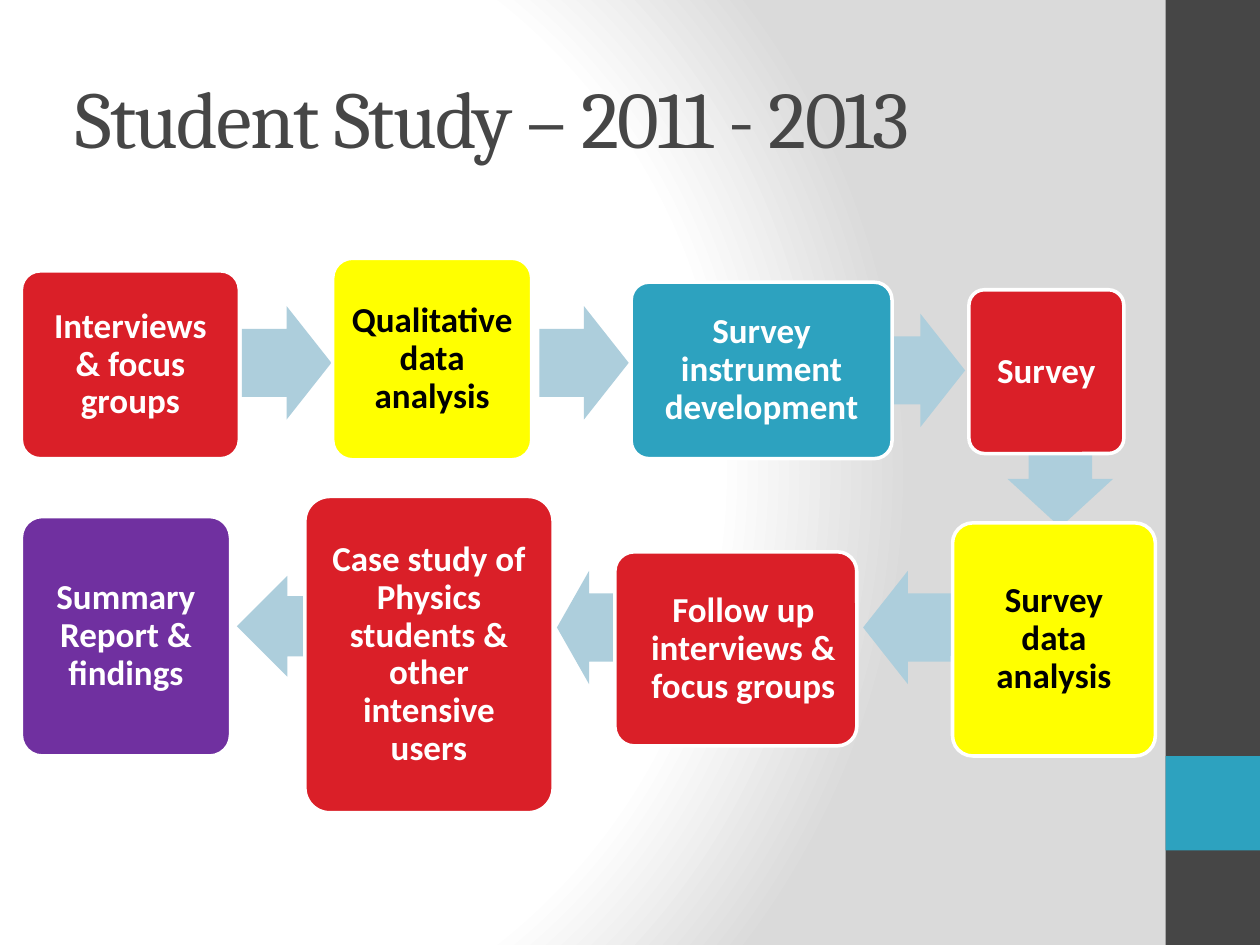
from lxml import etree
from pptx import Presentation
from pptx.dml.color import RGBColor
from pptx.enum.shapes import MSO_SHAPE
from pptx.enum.text import MSO_ANCHOR, PP_ALIGN
from pptx.oxml import parse_xml
from pptx.oxml.ns import nsdecls, qn
from pptx.util import Inches, Pt

RED, YELLOW, TEAL, PURPLE = "DA1F28", "FFFF00", "2DA2BF", "7030A0"
WHITE, BLACK, DARK, PALE, GREY = "FFFFFF", "000000", "464646", "ADCEDC", "DADADA"

# Wording, fill, box (left, top, width, height), left and right text insets
STEPS = [
    ("Interviews & focus groups", RED, (0.17, 2.15, 1.73, 1.49), (0.13, 0.13)),
    ("Qualitative data analysis", YELLOW, (2.64, 2.05, 1.58, 1.6), (0.09, 0.09)),
    ("Survey instrument development", TEAL, (5.01, 2.24, 2.07, 1.4), (0.1, 0.1)),
    ("Survey", RED, (7.69, 2.3, 1.23, 1.3), (0.1, 0.1)),
    ("Survey data analysis", YELLOW, (7.56, 4.15, 1.61, 1.85), (0.1, 0.1)),
    ("Follow up interviews & focus groups", RED, (4.88, 4.38, 1.92, 1.54), (0.16, 0.04)),
    ("Case study of Physics students & other intensive users", RED,
     (2.42, 3.94, 1.97, 2.51), (0.1, 0.1)),
    ("Summary Report & findings", PURPLE, (0.17, 4.1, 1.66, 1.9), (0.1, 0.1)),
]

# Box before turning, rotation in degrees
ARROWS = [
    ((1.92, 2.43, 0.71, 0.9), 0),
    ((4.28, 2.43, 0.71, 0.9), 0),
    ((6.95, 2.49, 0.71, 0.9), 0),
    ((8.03, 3.38, 0.77, 0.84), 90),
    ((6.85, 4.53, 0.71, 0.9), 180),
    ((4.42, 4.53, 0.51, 0.9), 180),
    ((1.88, 4.57, 0.95, 0.8), 180),
]


def color(hex_text):
    return RGBColor.from_string(hex_text)


def add_block(page, preset, box, fill):
    """Add a flat preset shape without outline or shadow."""
    block = page.shapes.add_shape(preset, *(Inches(length) for length in box))
    block.shadow.inherit = False
    block.fill.solid()
    block.fill.fore_color.rgb = color(fill)
    block.line.fill.background()
    return block


def set_background(page):
    """Fill the page with a circular gradient centred left of the middle."""
    fill = page.background.fill
    fill.gradient()
    gradient = page.element.find(".//" + qn("a:gradFill"))
    for child in list(gradient):
        gradient.remove(child)
    stops = etree.SubElement(gradient, qn("a:gsLst"))
    for percent, shade in ((0, WHITE), (75, WHITE), (100, GREY)):
        stop = etree.SubElement(stops, qn("a:gs"), pos=str(percent * 1000))
        etree.SubElement(stop, qn("a:srgbClr"), val=shade)
    gradient.append(parse_xml(
        f'<a:path {nsdecls("a")} path="circle">'
        '<a:fillToRect l="20000" t="50000" r="100000" b="50000"/></a:path>'))


def add_sidebar(page, box):
    left, top, width, height = box
    add_block(page, MSO_SHAPE.RECTANGLE, box, DARK)
    add_block(page, MSO_SHAPE.RECTANGLE, (left, top + 0.8 * height, width, width), TEAL)


def set_title(page, box, text):
    title = page.shapes.title
    title.left, title.top, title.width, title.height = (Inches(length) for length in box)
    frame = title.text_frame
    frame.text = text
    frame.word_wrap = True
    frame.vertical_anchor = MSO_ANCHOR.MIDDLE
    para = frame.paragraphs[0]
    para.alignment = PP_ALIGN.LEFT
    span = para.runs[0]
    span.font.name = "Cambria"
    span.font.size = Pt(46)
    span.font.color.rgb = color(DARK)
    span.font._element.set("spc", "-100")


def add_arrow(page, box, rotation):
    arrow = add_block(page, MSO_SHAPE.RIGHT_ARROW, box, PALE)
    arrow.adjustments[0] = 0.6
    arrow.adjustments[1] = 0.5
    arrow.rotation = rotation


def add_step(page, box, text, fill, insets):
    step = add_block(page, MSO_SHAPE.ROUNDED_RECTANGLE, box, fill)
    step.adjustments[0] = 0.1
    step.line.color.rgb = color(WHITE)
    step.line.width = Pt(2)
    frame = step.text_frame
    frame.word_wrap = True
    frame.vertical_anchor = MSO_ANCHOR.MIDDLE
    frame.margin_left, frame.margin_right = (Inches(inset) for inset in insets)
    frame.text = text
    para = frame.paragraphs[0]
    para.alignment = PP_ALIGN.CENTER
    para.line_spacing = 0.9
    para.font.name = "Calibri"
    para.font.size = Pt(20)
    para.font.bold = True
    para.font.color.rgb = color(BLACK if fill == YELLOW else WHITE)


def main():
    deck = Presentation()
    deck.slide_width, deck.slide_height = Inches(10), Inches(7.5)
    page = deck.slides.add_slide(deck.slide_layouts[5])
    set_background(page)
    add_sidebar(page, (9.25, 0, 0.75, 7.5))
    set_title(page, (0.5, 0.3, 8.33, 1.25), "Student Study – 2011 - 2013")
    for box, rotation in ARROWS:
        add_arrow(page, box, rotation)
    for text, fill, box, insets in STEPS:
        add_step(page, box, text, fill, insets)
    deck.save("out.pptx")


if __name__ == "__main__":
    main()
